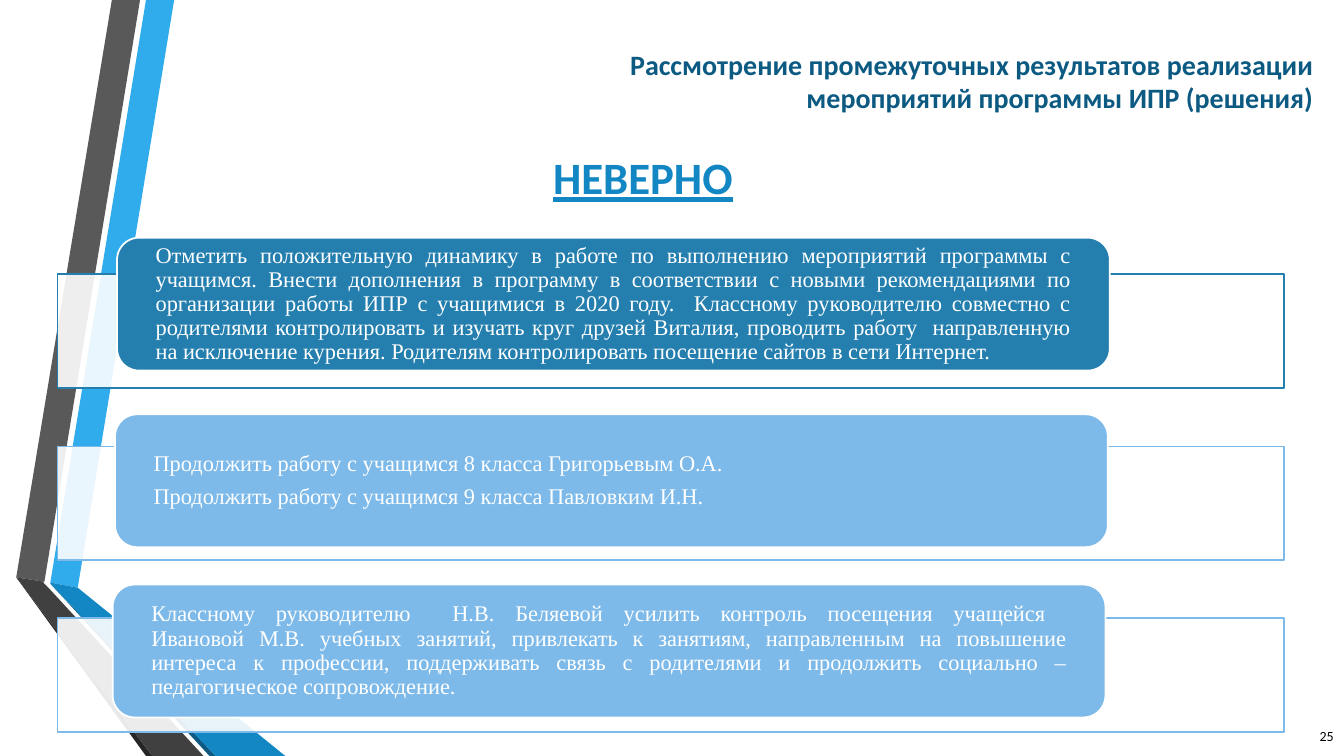
from lxml import etree
from pptx import Presentation
from pptx.dml.color import RGBColor
from pptx.enum import shapes, text
from pptx.oxml import ns
from pptx.util import Cm, Pt

COLORS = {
    "white": "FFFFFF", "black": "000000", "navy": "0C5A82", "blue": "1287C3",
    "bright": "30ACEC", "gray": "595959", "dark gray": "404040",
    "charcoal": "262626", "teal": "247FAF", "sky": "7DBAE9",
}


def paint(shape, fill, line=None):
    """Give a shape a plain fill and an optional outline."""
    shape.shadow.inherit = False
    shape.fill.solid()
    shape.fill.fore_color.rgb = RGBColor.from_string(COLORS[fill])
    if line:
        shape.line.color.rgb = RGBColor.from_string(COLORS[line])
        shape.line.width = Pt(1.25)
    else:
        shape.line.fill.background()


def write(frame, paragraphs, color, align, frame_format, font_format, spacing=None):
    """Fill a text frame with equally formatted paragraphs."""
    for key, value in frame_format.items():
        setattr(frame, key, value)
    for index, words in enumerate(paragraphs):
        paragraph = frame.add_paragraph() if index else frame.paragraphs[0]
        paragraph.text = words
        paragraph.alignment = align
        for key, value in (spacing or {}).items():
            setattr(paragraph, key, value)
        for run in paragraph.runs:
            run.font.color.rgb = RGBColor.from_string(COLORS[color])
            for key, value in font_format.items():
                setattr(run.font, key, value)


prs = Presentation()
prs.slide_width, prs.slide_height = Cm(33.87), Cm(19.05)
slide = prs.slides.add_slide(prs.slide_layouts[6])

# Folded ribbons on the left, outlines in centimetres
ribbons = [
    ("bright", [(1.27, 14.68), (1.96, 14.81), (4.39, 0), (3.68, 0)]),
    ("gray", [(3.53, 0), (2.82, 0), (0.41, 14.55), (1.12, 14.66)]),
    ("charcoal", [(0.41, 14.55), (3.68, 19.05), (3.84, 19.05)]),
    ("navy", [(1.27, 14.71), (5.28, 19.05), (5.44, 19.05)]),
    ("blue", [(1.27, 14.68), (1.27, 14.71), (5.44, 19.05), (7.19, 19.05), (1.96, 14.81)]),
    ("dark gray", [(5.13, 19.05), (1.22, 14.81), (1.09, 14.68), (1.12, 14.66),
                   (0.41, 14.55), (3.84, 19.05)]),
]
for color, outline in ribbons:
    points = [(Cm(x), Cm(y)) for x, y in outline]
    builder = slide.shapes.build_freeform(*points[0])
    builder.add_line_segments(points[1:], close=True)
    paint(builder.convert_to_shape(), color)

# Title, verdict and slide number
middle, top = text.MSO_ANCHOR.MIDDLE, text.MSO_ANCHOR.TOP
right, left, justify = text.PP_ALIGN.RIGHT, text.PP_ALIGN.LEFT, text.PP_ALIGN.JUSTIFY
labels = [
    ("Рассмотрение промежуточных результатов реализации мероприятий программы ИПР (решения)",
     (12.62, 0.25, 20.73, 3.58), "navy", right, middle, True, {"size": Pt(20), "bold": True}),
    ("НЕВЕРНО", (13.69, 3.66, 5.51, 1.63), "blue", left, top, False,
     {"size": Pt(32), "bold": True, "underline": True}),
    ("25", (26.24, 18.03, 7.62, 1.02), "black", right, middle, True, {"size": Pt(10)}),
]
for words, place, color, align, anchor, wrap, font_format in labels:
    label = slide.shapes.add_textbox(*map(Cm, place))
    write(label.text_frame, [words], color, align,
          {"word_wrap": wrap, "vertical_anchor": anchor},
          {"name": "Calibri", **font_format})

# Decisions: an outlined panel behind each rounded card
decisions = [
    ("teal", 6.91, 2.95, 5.99, [
        "Отметить положительную динамику в работе по выполнению мероприятий программы с "
        "учащимся. Внести дополнения в программу в соответствии с новыми рекомендациями по "
        "организации работы ИПР с учащимися в 2020 году.  Классному руководителю совместно с "
        "родителями контролировать и изучать круг друзей Виталия, проводить работу  "
        "направленную на исключение курения. Родителям контролировать посещение сайтов в "
        "сети Интернет."]),
    ("sky", 11.25, 2.9, 10.44, [
        "Продолжить работу с учащимся 8 класса Григорьевым О.А.",
        "Продолжить работу с учащимся 9 класса Павловким И.Н."]),
    ("sky", 15.57, 2.84, 14.73, [
        "Классному руководителю  Н.В. Беляевой усилить контроль посещения учащейся \v"
        "Ивановой М.В. учебных занятий, привлекать к занятиям, направленным на повышение "
        "интереса к профессии, поддерживать связь с родителями и продолжить социально – "
        "педагогическое сопровождение."]),
]
card_frame = {
    "word_wrap": True, "vertical_anchor": middle, "margin_left": Cm(0.81),
    "margin_right": Cm(0.81), "margin_top": 0, "margin_bottom": 0,
}
for color, panel_top, card_left, card_top, paragraphs in decisions:
    panel = slide.shapes.add_shape(
        shapes.MSO_SHAPE.RECTANGLE, Cm(1.45), Cm(panel_top), Cm(30.91), Cm(2.87))
    paint(panel, "white", color)
    white = panel.fill._xPr.find(ns.qn("a:solidFill"))[0]
    etree.SubElement(white, ns.qn("a:alpha")).set("val", "90000")

    card = slide.shapes.add_shape(
        shapes.MSO_SHAPE.ROUNDED_RECTANGLE, Cm(card_left), Cm(card_top), Cm(25.02), Cm(3.35))
    paint(card, color, "white")
    write(card.text_frame, paragraphs, "white", justify, card_frame,
          {"name": "Times New Roman", "size": Pt(16)},
          {"line_spacing": 0.9, "space_after": Pt(5.6)})

prs.save("out.pptx")
